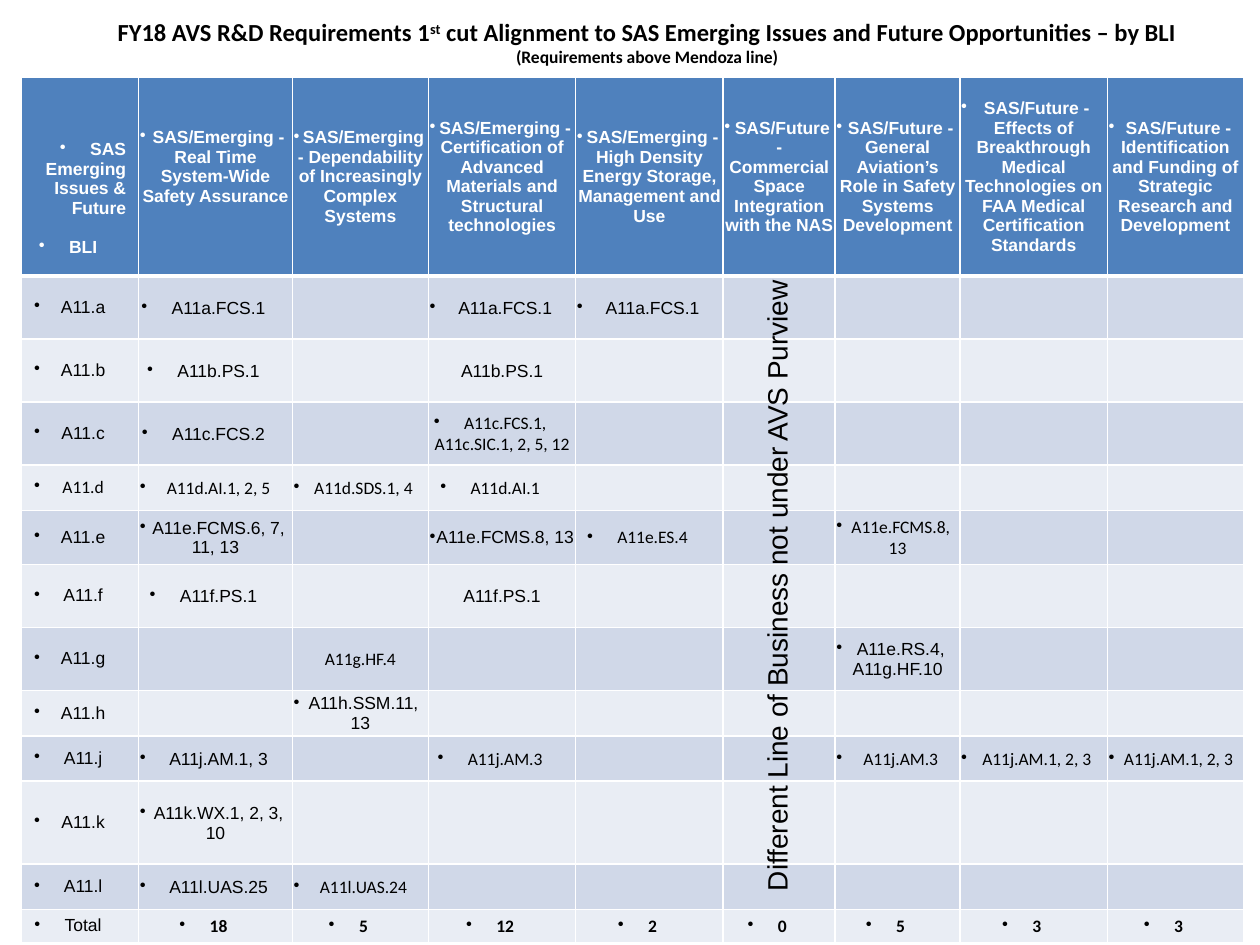
import pptx
import pptx.util
import pptx.dml.color
import pptx.enum.text
import pptx.oxml
import pptx.oxml.ns

Inches = pptx.util.Inches
Pt = pptx.util.Pt
ALIGN = pptx.enum.text.PP_ALIGN
MID = pptx.enum.text.MSO_ANCHOR.MIDDLE
COLORS = {"head": "4F81BD", "odd": "D0D8E8", "even": "E9EDF4",
          "white": "FFFFFF", "black": "000000"}

TITLE = [  # text, size, raised
    ("FY18 AVS R&D Requirements 1", 14, False),
    ("st", 14, True),
    (" cut Alignment to SAS Emerging Issues and Future Opportunities – by BLI", 14, False),
    ("(Requirements above Mendoza line)", 10, False),
]
HEADS = [
    "SAS Emerging Issues & Future\nBLI",
    "SAS/Emerging - Real Time System-Wide Safety Assurance",
    "SAS/Emerging - Dependability of Increasingly Complex Systems",
    "SAS/Emerging - Certification of Advanced Materials and Structural technologies",
    "SAS/Emerging - High Density Energy Storage, Management and Use",
    "SAS/Future - Commercial Space Integration with the NAS",
    "SAS/Future - General Aviation’s Role in Safety Systems Development",
    "SAS/Future - Effects of Breakthrough Medical Technologies on FAA Medical "
    "Certification Standards",
    "SAS/Future - Identification and Funding of Strategic Research and Development",
]
# Height, then {column: (text, flags)}; flags: c Calibri, b bold, n no bullet
ROWS = [
    (0.5, {0: ("A11.a", ""), 1: ("A11a.FCS.1", ""), 3: ("A11a.FCS.1", ""),
           4: ("A11a.FCS.1", "")}),
    (0.5, {0: ("A11.b", ""), 1: ("A11b.PS.1", ""), 3: ("A11b.PS.1", "n")}),
    (0.5, {0: ("A11.c", ""), 1: ("A11c.FCS.2", ""),
           3: ("A11c.FCS.1, A11c.SIC.1, 2, 5, 12", "c")}),
    (0.36, {0: ("A11.d", "c"), 1: ("A11d.AI.1, 2, 5", "c"),
            2: ("A11d.SDS.1, 4", "c"), 3: ("A11d.AI.1", "c")}),
    (0.43, {0: ("A11.e", ""), 1: ("A11e.FCMS.6, 7, 11, 13", ""),
            3: ("A11e.FCMS.8, 13", ""), 4: ("A11e.ES.4", "c"),
            6: ("A11e.FCMS.8, 13", "c")}),
    (0.5, {0: ("A11.f", ""), 1: ("A11f.PS.1", ""), 3: ("A11f.PS.1", "n")}),
    (0.5, {0: ("A11.g", ""), 2: ("A11g.HF.4", "cn"),
           6: ("A11e.RS.4, A11g.HF.10", "")}),
    (0.36, {0: ("A11.h", ""), 2: ("A11h.SSM.11, 13", "")}),
    (0.36, {0: ("A11.j", ""), 1: ("A11j.AM.1, 3", ""), 3: ("A11j.AM.3", "c"),
            6: ("A11j.AM.3", "c"), 7: ("A11j.AM.1, 2, 3", "c"),
            8: ("A11j.AM.1, 2, 3", "c")}),
    (0.66, {0: ("A11.k", ""), 1: ("A11k.WX.1, 2, 3, 10", "")}),
    (0.36, {0: ("A11.l", ""), 1: ("A11l.UAS.25", ""), 2: ("A11l.UAS.24", "c")}),
]
TOTALS = [18, 5, 12, 2, 0, 5, 3, 3]
WIDTHS = [0.93, 1.22, 1.08, 1.17, 1.17, 0.89, 0.99, 1.17, 1.08]
HEAD_H, TOTAL_H = 1.58, 0.26
NOTE = "Different Line of Business not under AVS Purview"


def color(name):
    return pptx.dml.color.RGBColor.from_string(COLORS[name])


def style(font, size, name, ink, bold=False):
    font.size, font.name, font.bold = Pt(size), name, bold
    font.color.rgb = color(ink)


def bullet(para):
    props = para._p.get_or_add_pPr()
    props.set("marL", "0")
    props.set("indent", str(Inches(-0.24)))
    mark = pptx.oxml.parse_xml(
        f'<a:buChar {pptx.oxml.ns.nsdecls("a")} char="•"/>')
    props.append(mark)


def edge(cell, thick):
    """Draw white cell borders; thick is the bottom width in points."""
    props = cell._tc.get_or_add_tcPr()
    for i, side in enumerate("LRTB"):
        width = Pt(thick if side == "B" else 1)
        props.insert(i, pptx.oxml.parse_xml(
            f'<a:ln{side} {pptx.oxml.ns.nsdecls("a")} w="{width}"><a:solidFill>'
            f'<a:srgbClr val="{COLORS["white"]}"/></a:solidFill></a:ln{side}>'))


def put(cell, text, flags, fill, ink="black", thick=1):
    cell.fill.solid()
    cell.fill.fore_color.rgb = color(fill)
    edge(cell, thick)
    cell.vertical_anchor = MID
    cell.text_frame.text = text
    for i, para in enumerate(cell.text_frame.paragraphs):
        para.alignment = ALIGN.CENTER
        if i:
            para.space_before = Pt(11)
        if text and "n" not in flags:
            bullet(para)
        for run in para.runs:
            style(run.font, 10, "Calibri" if "c" in flags else "Arial",
                  ink, "b" in flags)


def add_title(slide):
    title = slide.shapes.title
    title.left, title.top = Inches(0.5), Inches(0)
    title.width, title.height = Inches(9.27), Inches(0.67)
    title.text_frame.vertical_anchor = MID
    para = title.text_frame.paragraphs[0]
    para.alignment = ALIGN.CENTER
    for text, size, raised in TITLE:
        if text.startswith("("):
            para.add_line_break()
        run = para.add_run()
        run.text = text
        style(run.font, size, "Calibri", "black", True)
        if raised:
            run._r.get_or_add_rPr().set("baseline", "30000")


def add_grid(slide):
    last = {0: ("Total", "")}
    last.update({i: (str(n), "cb") for i, n in enumerate(TOTALS, 1)})
    body = ROWS + [(TOTAL_H, last)]
    highs = [HEAD_H] + [high for high, _ in body]
    grid = slide.shapes.add_table(
        len(highs), len(WIDTHS), Inches(0.17), Inches(0.61),
        Inches(sum(WIDTHS)), Inches(sum(highs))).table
    for col, width in zip(grid.columns, WIDTHS):
        col.width = Inches(width)
    for row, high in zip(grid.rows, highs):
        row.height = Inches(high)
        for cell in list(row.cells)[1:]:
            cell.margin_left = cell.margin_right = cell.margin_top = Inches(0.01)
            cell.margin_bottom = 0
    for i, text in enumerate(HEADS):
        put(grid.cell(0, i), text, "b", "head", "white", 3)
    corner = grid.cell(0, 0)
    corner.margin_top = Inches(0.4)
    corner.text_frame.paragraphs[0].alignment = ALIGN.RIGHT
    grid.cell(0, 1).margin_bottom = Inches(0.16)
    for r, (_, cells) in enumerate(body, 1):
        for c in range(len(WIDTHS)):
            text, flags = cells.get(c, ("", ""))
            put(grid.cell(r, c), text, flags, "odd" if r % 2 else "even")


def add_note(slide):
    box = slide.shapes.add_textbox(Inches(3.61), Inches(4.43),
                                   Inches(5.11), Inches(0.37))
    box.rotation = 270
    box.text_frame.word_wrap = False
    box.text_frame.auto_size = pptx.enum.text.MSO_AUTO_SIZE.SHAPE_TO_FIT_TEXT
    box.text_frame.text = NOTE
    style(box.text_frame.paragraphs[0].runs[0].font, 16, "Arial", "black")


def main():
    deck = pptx.Presentation()
    deck.slide_width, deck.slide_height = Inches(10), Inches(7.5)
    slide = deck.slides.add_slide(deck.slide_layouts[5])
    add_title(slide)
    add_grid(slide)
    add_note(slide)
    deck.save("out.pptx")


if __name__ == "__main__":
    main()
